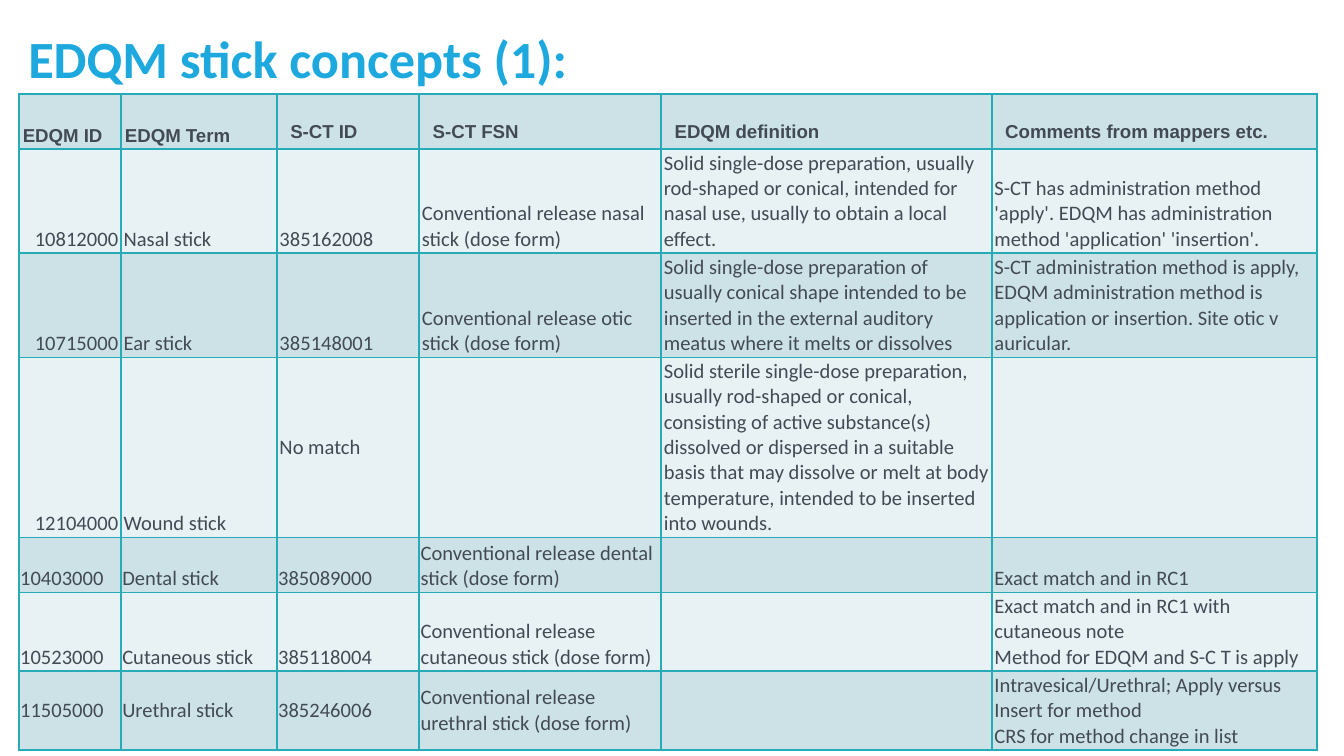
"""Build a slide that tabulates the EDQM stick concepts and their S-CT matches."""
from dataclasses import dataclass

from lxml import etree
from pptx import Presentation
from pptx import util as u
from pptx.dml.color import RGBColor
from pptx.enum import text
from pptx.oxml.ns import qn

WIDTH = 10
HEIGHT = WIDTH * 9 / 16
COLUMNS = [0.76, 1.16, 1.06, 1.8, 2.46, 2.42]
ROW_HEIGHT = 0.41
BLUE, TEAL, INK = "1DA8DE", "27ABB8", "424A55"
BANDS = ["CDE2E6", "E8F1F3"]
BOTTOM, MIDDLE = text.MSO_ANCHOR.BOTTOM, text.MSO_ANCHOR.MIDDLE
LEFT, RIGHT = text.PP_ALIGN.LEFT, text.PP_ALIGN.RIGHT


@dataclass
class Concept:
    edqm_id: str
    term: str
    sct_id: str
    fsn: str
    definition: str
    comments: str
    middle: tuple = ()
    id_align: text.PP_ALIGN = LEFT
    inset: float = 0.01

    @property
    def values(self) -> list:
        return [self.edqm_id, self.term, self.sct_id, self.fsn, self.definition, self.comments]


HEADINGS = ["EDQM ID", "EDQM Term", "S-CT ID", "S-CT FSN", "EDQM definition",
            "Comments from mappers etc."]
CONCEPTS = [
    Concept("10812000", "Nasal stick", "385162008",
            "Conventional release nasal stick (dose form)",
            "Solid single-dose preparation, usually rod-shaped or conical, intended for "
            "nasal use, usually to obtain a local effect.",
            "S-CT has administration method 'apply'. EDQM has administration method "
            "'application' 'insertion'.", id_align=RIGHT, inset=0.02),
    Concept("10715000", "Ear stick", "385148001",
            "Conventional release otic stick (dose form)",
            "Solid single-dose preparation of usually conical shape intended to be inserted "
            "in the external auditory meatus where it melts or dissolves",
            "S-CT administration method is apply, EDQM administration method is application "
            "or insertion. Site otic v auricular.", middle=(5,), id_align=RIGHT, inset=0.02),
    Concept("12104000", "Wound stick", "No match", "",
            "Solid sterile single-dose preparation, usually rod-shaped or conical, consisting "
            "of active substance(s) dissolved or dispersed in a suitable basis that may "
            "dissolve or melt at body temperature, intended to be inserted into wounds.",
            "", middle=(2,), id_align=RIGHT, inset=0.02),
    Concept("10403000", "Dental stick", "385089000",
            "Conventional release dental stick (dose form)", "", "Exact match and in RC1"),
    Concept("10523000", "Cutaneous stick", "385118004",
            "Conventional release cutaneous stick (dose form)", "",
            "Exact match and in RC1 with cutaneous note\nMethod for EDQM and S-C T is apply"),
    Concept("11505000", "Urethral stick", "385246006",
            "Conventional release urethral stick (dose form)", "",
            "Intravesical/Urethral; Apply versus Insert for method\n"
            "CRS for method change in list", middle=(0, 1, 2, 3)),
]


def rgb(value: str) -> RGBColor:
    return RGBColor.from_string(value)


def write(tf, content: str, *, size: float, font: str = "Calibri", color: str = INK,
          bold: bool = False, align=LEFT, spacing: float = 1.0) -> None:
    """Fill a text frame, one paragraph a line, in one format."""
    for i, line in enumerate(content.split("\n")):
        p = tf.add_paragraph() if i else tf.paragraphs[0]
        p.alignment, p.line_spacing = align, spacing
        r = p.add_run()
        r.text = line
        r.font.size, r.font.name, r.font.bold = u.Pt(size), font, bold
        r.font.color.rgb = rgb(color)


def set_insets(box, x: float, y: float) -> None:
    box.margin_left = box.margin_right = u.Inches(x)
    box.margin_top = box.margin_bottom = u.Inches(y)


def style_cell(cell, fill: str) -> None:
    """Border all four sides of a cell and fill it."""
    tc_pr = cell._tc.get_or_add_tcPr()
    for side in ("a:lnL", "a:lnR", "a:lnT", "a:lnB"):
        ln = etree.SubElement(tc_pr, qn(side), w=str(u.Pt(1)))
        solid = etree.SubElement(ln, qn("a:solidFill"))
        etree.SubElement(solid, qn("a:srgbClr"), val=TEAL)
    cell.fill.solid()
    cell.fill.fore_color.rgb = rgb(fill)


def add_title(s, content: str) -> None:
    title = s.shapes.title
    title.left, title.top = u.Inches(0.14), u.Inches(0.05)
    title.width, title.height = u.Inches(8.62), u.Inches(0.82)
    tf = title.text_frame
    tf.auto_size, tf.word_wrap = text.MSO_AUTO_SIZE.NONE, True
    tf.vertical_anchor = MIDDLE
    set_insets(tf, 0.07, 0.04)
    write(tf, content, size=28, color=BLUE, bold=True, spacing=0.9)


def add_concept_table(s, concepts: list[Concept]) -> None:
    count = len(concepts) + 1
    frame = s.shapes.add_table(count, len(COLUMNS), u.Inches(0.14), u.Inches(0.7),
                               u.Inches(sum(COLUMNS)), u.Inches(ROW_HEIGHT * count))
    table = frame.table
    table.first_row = table.horz_banding = False
    for column, width in zip(table.columns, COLUMNS):
        column.width = u.Inches(width)
    for i, row in enumerate(table.rows):
        row.height = u.Inches(ROW_HEIGHT)
        for cell in row.cells:
            style_cell(cell, BANDS[i % 2])
    for j, heading in enumerate(HEADINGS):
        cell = table.cell(0, j)
        cell.vertical_anchor = BOTTOM
        if j < 2:
            set_insets(cell, 0.03, 0.02)
        write(cell.text_frame, heading, size=10, font="Arial", bold=True)
    for i, concept in enumerate(concepts, 1):
        for j, value in enumerate(concept.values):
            if value:
                cell = table.cell(i, j)
                cell.vertical_anchor = MIDDLE if j in concept.middle else BOTTOM
                set_insets(cell, 0.02 if j == 5 else concept.inset, 0.01)
                write(cell.text_frame, value, size=11,
                      align=LEFT if j else concept.id_align)


def main() -> None:
    prs = Presentation()
    prs.slide_width, prs.slide_height = u.Inches(WIDTH), u.Inches(HEIGHT)
    s = prs.slides.add_slide(prs.slide_layouts[5])
    add_title(s, "EDQM stick concepts (1):")
    add_concept_table(s, CONCEPTS)
    prs.save("out.pptx")


if __name__ == "__main__":
    main()
